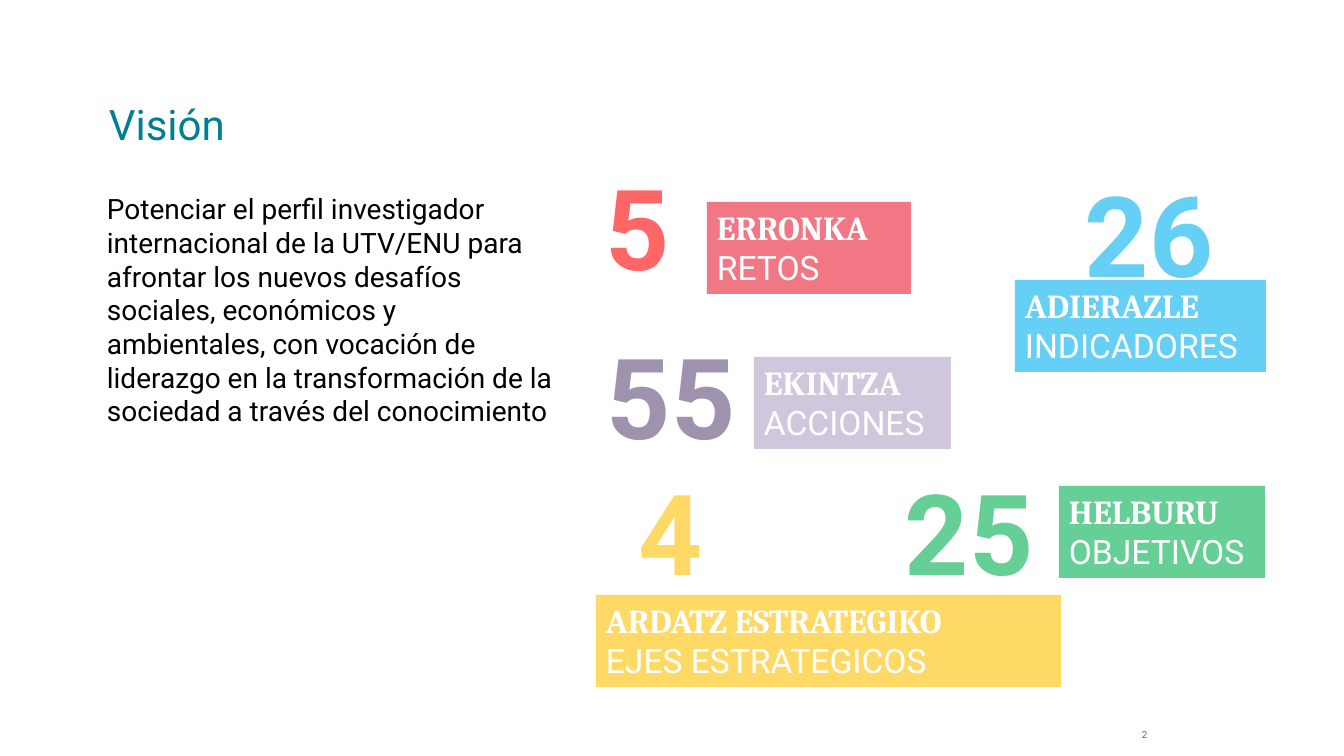
from lxml import etree
from pptx import Presentation
from pptx.dml.color import RGBColor
from pptx.enum.shapes import MSO_SHAPE
from pptx.enum.text import MSO_ANCHOR
from pptx.oxml.ns import qn
from pptx.util import Emu, Pt

RECT = MSO_SHAPE.RECTANGLE
TOP, MIDDLE = MSO_ANCHOR.TOP, MSO_ANCHOR.MIDDLE
PX = 914400 / 100.8
W, H = 1344, 756
LABEL_H = 92
NUMBER_H = 146


def add_block(box, lines, fill=None, anchor=TOP):
    """Add a text box, or a filled rectangle; lines hold (text, font, size, colour, bold)."""
    at = [Emu(round(v * PX)) for v in box]
    if fill:
        sp = s.shapes.add_shape(RECT, *at)
        sp.shadow.inherit = False
        sp.fill.solid()
        sp.fill.fore_color.rgb = RGBColor.from_string(fill)
        sp.line.fill.background()
    else:
        sp = s.shapes.add_textbox(*at)
    tf = sp.text_frame
    tf.word_wrap = True
    tf.vertical_anchor = anchor
    for i, (text, font, size, color, bold) in enumerate(lines):
        p = tf.paragraphs[0] if i == 0 else tf.add_paragraph()
        p.alignment = 1
        r = p.add_run()
        r.text = text
        r.font.name = font
        r.font.size = Pt(size)
        r.font.bold = bold
        r.font.color.rgb = RGBColor.from_string(color)
    return sp


prs = Presentation()
prs.slide_width, prs.slide_height = Emu(round(W * PX)), Emu(round(H * PX))
s = prs.slides.add_slide(prs.slide_layouts[6])

add_block((1132, 715, 43, 40), [("2", "Roboto", 7, "000000", False)], anchor=MIDDLE)
add_block((99, 94, 294, 55), [("Visión", "Roboto", 30, "007F93", False)])
vision = (
    "Potenciar el perfil investigador internacional de la UTV/ENU para "
    "afrontar los nuevos desafíos sociales, económicos y ambientales, con "
    "vocación de liderazgo en la transformación de la sociedad a través del "
    "conocimiento"
)
add_block((97, 187, 466, 281), [(vision, "Roboto", 20, "000000", False)])

# number, its colour, (left, top, width); Basque, Spanish, fill, (left, top, width)
figures = [
    ("5", "FF0000", (596, 154, 89), "ERRONKA", "RETOS", "E71D31", (707, 202, 204)),
    ("25", "00B050", (895, 459, 158), "HELBURU", "OBJETIVOS", "00B050", (1059, 486, 206)),
    ("55", "604A7B", (597, 323, 158), "EKINTZA", "ACCIONES", "B3A2C7", (754, 357, 197)),
    ("4", "FFC000", (629, 459, 127), "ARDATZ ESTRATEGIKO", "EJES ESTRATEGICOS",
     "FFC000", (596, 595, 465)),
    ("26", "00B0F0", (1075, 161, 158), "ADIERAZLE", "INDICADORES", "00B0F0", (1015, 280, 251)),
]
for number, color, number_at, basque, spanish, fill, label_at in figures:
    add_block((*label_at, LABEL_H), [
        (basque, "Cambria", 24, "FFFFFF", True),
        (spanish, "Roboto", 24, "FFFFFF", False),
    ], fill)
    add_block((*number_at, NUMBER_H), [(number, "Roboto", 80, color, True)])

# Translucent white veil that softens the right-hand side
veil_left = 578
veil = add_block((veil_left, 0, W - veil_left, H), [], "FFFFFF")
veil_color = veil.fill._xPr.find(qn("a:solidFill"))[0]
etree.SubElement(veil_color, qn("a:alpha"), val="40000")

prs.save("out.pptx")
